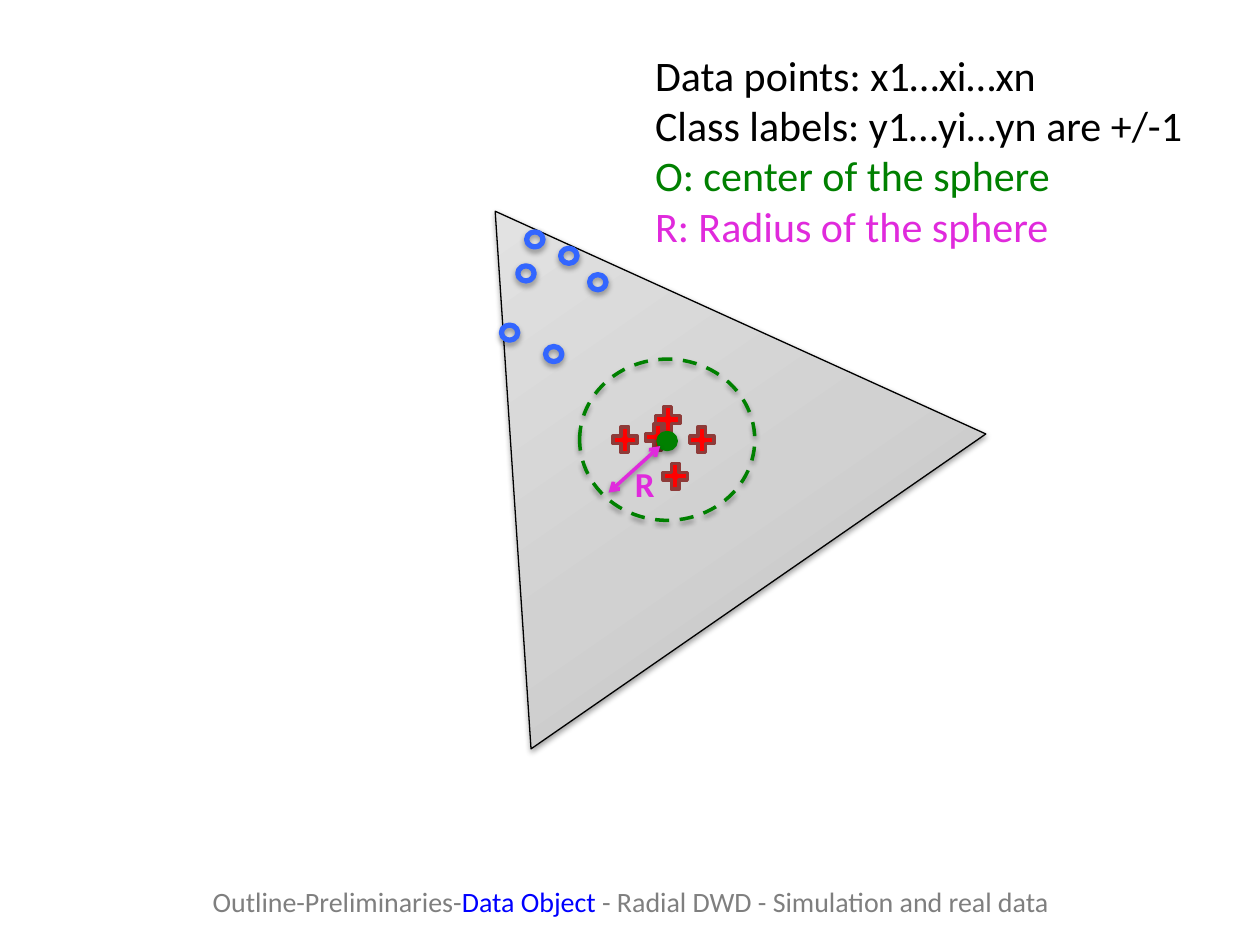
from lxml.etree import SubElement as Sub
from pptx import Presentation
from pptx.dml.color import RGBColor
from pptx.enum.dml import MSO_LINE
from pptx.enum.shapes import MSO_CONNECTOR, MSO_SHAPE as Kind
from pptx.enum.text import MSO_ANCHOR, MSO_AUTO_SIZE, PP_ALIGN
from pptx.oxml.ns import qn
from pptx.util import Inches, Pt

BLACK = RGBColor(0x00, 0x00, 0x00)
GRAY = RGBColor(0x7F, 0x7F, 0x7F)
NAVY = RGBColor(0x00, 0x00, 0xFF)
BLUE = RGBColor(0x33, 0x66, 0xFF)
RED = RGBColor(0xFF, 0x00, 0x00)
BROWN = RGBColor(0x8E, 0x3B, 0x39)
GREEN = RGBColor(0x00, 0x80, 0x00)
PINK = RGBColor(0xE0, 0x2A, 0xDC)
DARK = RGBColor(0xBD, 0xBD, 0xBD)
MID = RGBColor(0xD1, 0xD1, 0xD1)
LIGHT = RGBColor(0xEE, 0xEE, 0xEE)

deck = Presentation()
deck.slide_width, deck.slide_height = Inches(10), Inches(7.5)
slide = deck.slides.add_slide(deck.slide_layouts[6])
shapes = slide.shapes


def cast(item, alpha=0, drop=0):
    effect = Sub(item._element.spPr, qn("a:effectLst"))
    if alpha:
        shade = Sub(effect, qn("a:outerShdw"), blurRad=str(Pt(3.1)), dist=str(Pt(drop)),
                    dir="5400000", rotWithShape="0")
        tone = Sub(shade, qn("a:srgbClr"), val=str(BLACK))
        Sub(tone, qn("a:alpha"), val=str(alpha * 1000))


def draw(kind, box, fill, edge, width, alpha=35, drop=1.8):
    item = shapes.add_shape(kind, *map(Inches, box))
    if fill is None:
        item.fill.background()
    else:
        item.fill.solid()
        item.fill.fore_color.rgb = fill
    item.line.color.rgb = edge
    item.line.width = Pt(width)
    cast(item, alpha, drop)
    return item


cone = draw(Kind.ISOSCELES_TRIANGLE, (2.78, 1.35, 4.39, 3.67), LIGHT, BLACK, 0.75, 38, 1.6)
cone.rotation = 325.3
cone.fill.gradient()
cone.fill.gradient_angle = 90
stops = cone._element.spPr.find(qn("a:gradFill")).find(qn("a:gsLst"))
for old in list(stops):
    stops.remove(old)
for place, color in ((0, DARK), (35, MID), (100, LIGHT)):
    stop = Sub(stops, qn("a:gs"), pos=str(place * 1000))
    Sub(stop, qn("a:srgbClr"), val=str(color))

for x, y in ((5.44, 3.35), (4.83, 3.35), (5.09, 3.33), (5.17, 3.19), (5.23, 3.64)):
    draw(Kind.MATH_PLUS, (x, y, 0.26, 0.28), RED, BROWN, 2, 0)

for x, y in ((4.18, 1.84), (4.11, 2.11), (4.45, 1.97), (4.68, 2.18), (3.98, 2.58), (4.33, 2.75)):
    draw(Kind.FLOWCHART_CONNECTOR, (x, y, 0.13, 0.12), None, BLUE, 3)

sphere = draw(Kind.OVAL, (4.6, 2.85, 1.39, 1.28), None, GREEN, 2)
sphere.line.dash_style = MSO_LINE.DASH
draw(Kind.FLOWCHART_CONNECTOR, (5.23, 3.44, 0.13, 0.12), GREEN, GREEN, 3)

ray = shapes.add_connector(MSO_CONNECTOR.STRAIGHT, *map(Inches, (5.24, 3.54, 4.83, 3.91)))
ray.line.color.rgb = PINK
ray.line.width = Pt(2)
for end in ("a:headEnd", "a:tailEnd"):
    Sub(ray.line._ln, qn(end), type="arrow")
cast(ray, 38, 1.6)

grow = {"word_wrap": True, "auto_size": MSO_AUTO_SIZE.SHAPE_TO_FIT_TEXT}
foot = {"word_wrap": True, "vertical_anchor": MSO_ANCHOR.MIDDLE}
texts = (
    ((1.27, 6.95, 7.47, 0.4), foot, PP_ALIGN.CENTER, {"size": Pt(16)},
     [[("Outline-Preliminaries-", GRAY), ("Data Object ", NAVY),
       ("- Radial DWD - Simulation and real data", GRAY)]]),
    ((4.94, 3.62, 0.5, 0.44), grow, PP_ALIGN.LEFT, {"size": Pt(20), "bold": True},
     [[("R", PINK)]]),
    ((5.1, 0.34, 4.88, 1.72), grow, PP_ALIGN.LEFT, {"size": Pt(24)},
     [[("Data points: x1…xi…xn", BLACK)],
      [("Class labels: y1…yi…yn are +/-1", BLACK)],
      [("O: center of the sphere", GREEN)],
      [("R: Radius of the sphere", PINK)]]),
)
for box, setup, align, style, lines in texts:
    frame = shapes.add_textbox(*map(Inches, box)).text_frame
    for name, value in setup.items():
        setattr(frame, name, value)
    for i, line in enumerate(lines):
        para = frame.add_paragraph() if i else frame.paragraphs[0]
        para.alignment = align
        for words, color in line:
            run = para.add_run()
            run.text = words
            run.font.color.rgb = color
            for name, value in {"name": "Calibri", **style}.items():
                setattr(run.font, name, value)

deck.save("out.pptx")
